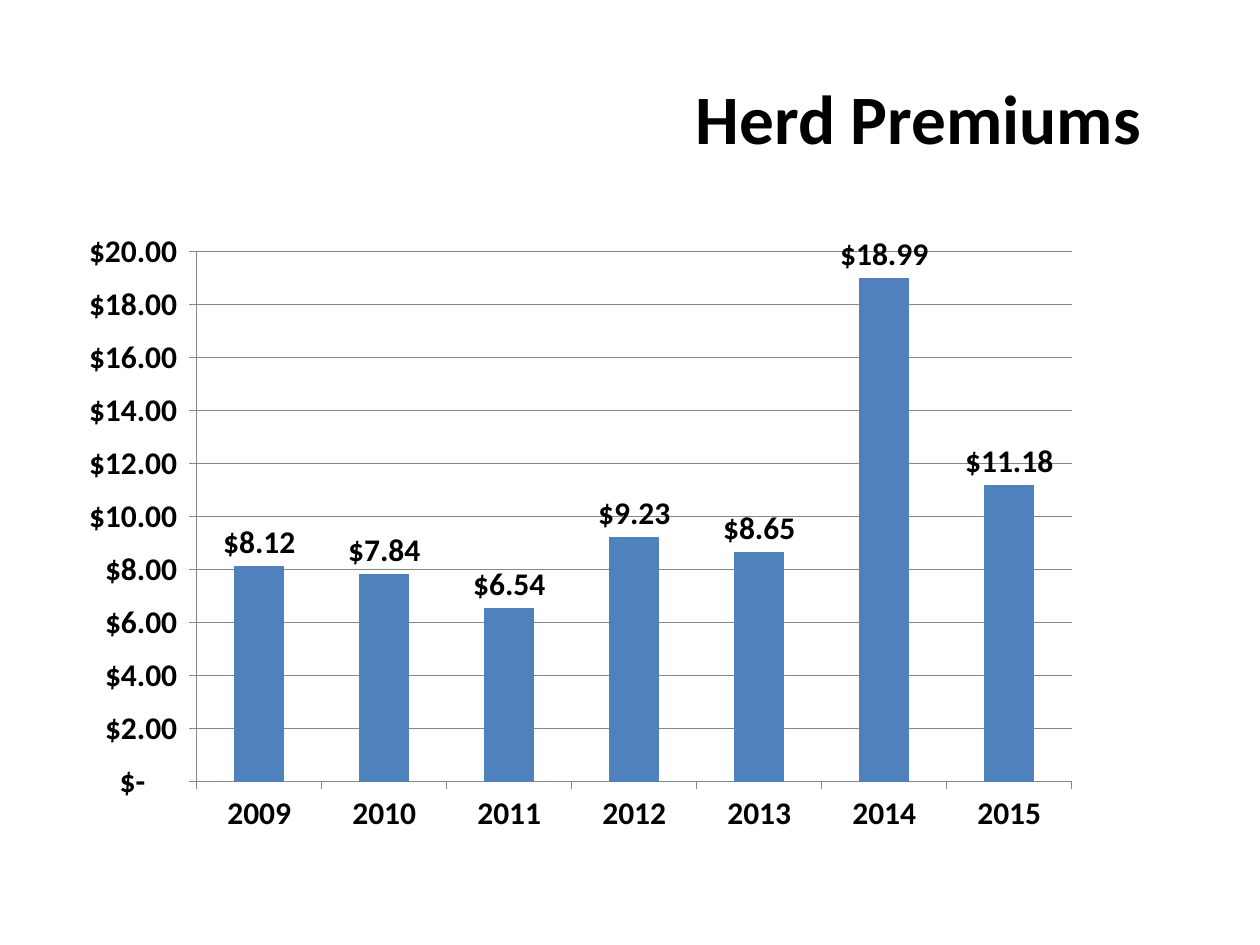
from pptx import Presentation
from pptx.chart.data import CategoryChartData
from pptx.dml.color import RGBColor
from pptx.enum.chart import XL_CHART_TYPE, XL_LABEL_POSITION, XL_TICK_MARK
from pptx.enum.text import MSO_ANCHOR, PP_ALIGN
from pptx.oxml import parse_xml
from pptx.oxml.ns import nsdecls
from pptx.util import Inches, Pt

TITLE = "Herd Premiums"
PREMIUMS = {
    "2009": 8.12,
    "2010": 7.84,
    "2011": 6.54,
    "2012": 9.23,
    "2013": 8.65,
    "2014": 18.99,
    "2015": 11.18,
}
ACCOUNTING = '_("$"* #,##0.00_);_("$"* \\(#,##0.00\\);_("$"* "-"??_);_(@_)'
FONT = "Calibri"
BLACK = RGBColor(0x00, 0x00, 0x00)
BLUE = RGBColor(0x4F, 0x81, 0xBD)
GRAY = RGBColor(0x86, 0x86, 0x86)
TITLE_BOX = [Inches(n) for n in (5.08, 0.3, 4.42, 1.25)]
CHART_BOX = [Inches(n) for n in (0.5, 1.75, 8.17, 4.95)]
PLOT_SHARE = {"x": 0.13, "y": 0.05, "w": 0.85, "h": 0.85}


def apply(target, values):
    for name, value in values.items():
        setattr(target, name, value)


def style_font(font, size):
    apply(font, {"name": FONT, "size": Pt(size), "bold": True})
    font.color.rgb = BLACK


def style_line(line):
    line.color.rgb = GRAY
    line.width = Pt(0.75)


def place_plot(chart):
    sides = "".join(f'<c:{side}Mode val="edge"/>' for side in "xy")
    shares = "".join(f'<c:{side} val="{share}"/>' for side, share in PLOT_SHARE.items())
    plot_area = chart.plots[0]._element.getparent()
    for layout in plot_area.findall("{*}layout"):
        plot_area.remove(layout)
    plot_area.insert(0, parse_xml(
        f'<c:layout {nsdecls("c")}><c:manualLayout><c:layoutTarget val="inner"/>'
        f"{sides}{shares}</c:manualLayout></c:layout>"))


def add_title(slide):
    title = slide.shapes.title
    apply(title, dict(zip(("left", "top", "width", "height"), TITLE_BOX)))
    title.text_frame.text = TITLE
    apply(title.text_frame, {"vertical_anchor": MSO_ANCHOR.MIDDLE, "word_wrap": True})
    heading = title.text_frame.paragraphs[0]
    heading.alignment = PP_ALIGN.CENTER
    style_font(heading.runs[0].font, 39.6)


def add_premium_chart(slide):
    premiums = CategoryChartData(number_format=ACCOUNTING)
    premiums.categories = list(PREMIUMS)
    premiums.add_series("Series 1", list(PREMIUMS.values()))
    chart = slide.shapes.add_chart(
        XL_CHART_TYPE.COLUMN_CLUSTERED, *CHART_BOX, premiums).chart
    apply(chart, {"has_title": False, "has_legend": False})
    style_font(chart.font, 18)

    columns = chart.plots[0]
    apply(columns, {"gap_width": 150, "overlap": -71, "vary_by_categories": False,
                    "has_data_labels": True})
    apply(columns.data_labels, {
        "show_value": True, "position": XL_LABEL_POSITION.OUTSIDE_END,
        "number_format": ACCOUNTING, "number_format_is_linked": False})
    style_font(columns.data_labels.font, 18)
    fill = columns.series[0].format.fill
    fill.solid()
    fill.fore_color.rgb = BLUE

    for axis in (chart.category_axis, chart.value_axis):
        apply(axis, {"major_tick_mark": XL_TICK_MARK.OUTSIDE,
                     "minor_tick_mark": XL_TICK_MARK.NONE})
        style_font(axis.tick_labels.font, 18)
        style_line(axis.format.line)
    apply(chart.value_axis, {"minimum_scale": 0, "maximum_scale": 20, "major_unit": 2,
                             "has_major_gridlines": True})
    apply(chart.value_axis.tick_labels, {
        "number_format": ACCOUNTING, "number_format_is_linked": False})
    style_line(chart.value_axis.major_gridlines.format.line)
    place_plot(chart)


def main():
    deck = Presentation()
    apply(deck, {"slide_width": Inches(10), "slide_height": Inches(7.5)})
    slide = deck.slides.add_slide(deck.slide_layouts[5])
    add_title(slide)
    add_premium_chart(slide)
    deck.save("out.pptx")


if __name__ == "__main__":
    main()
